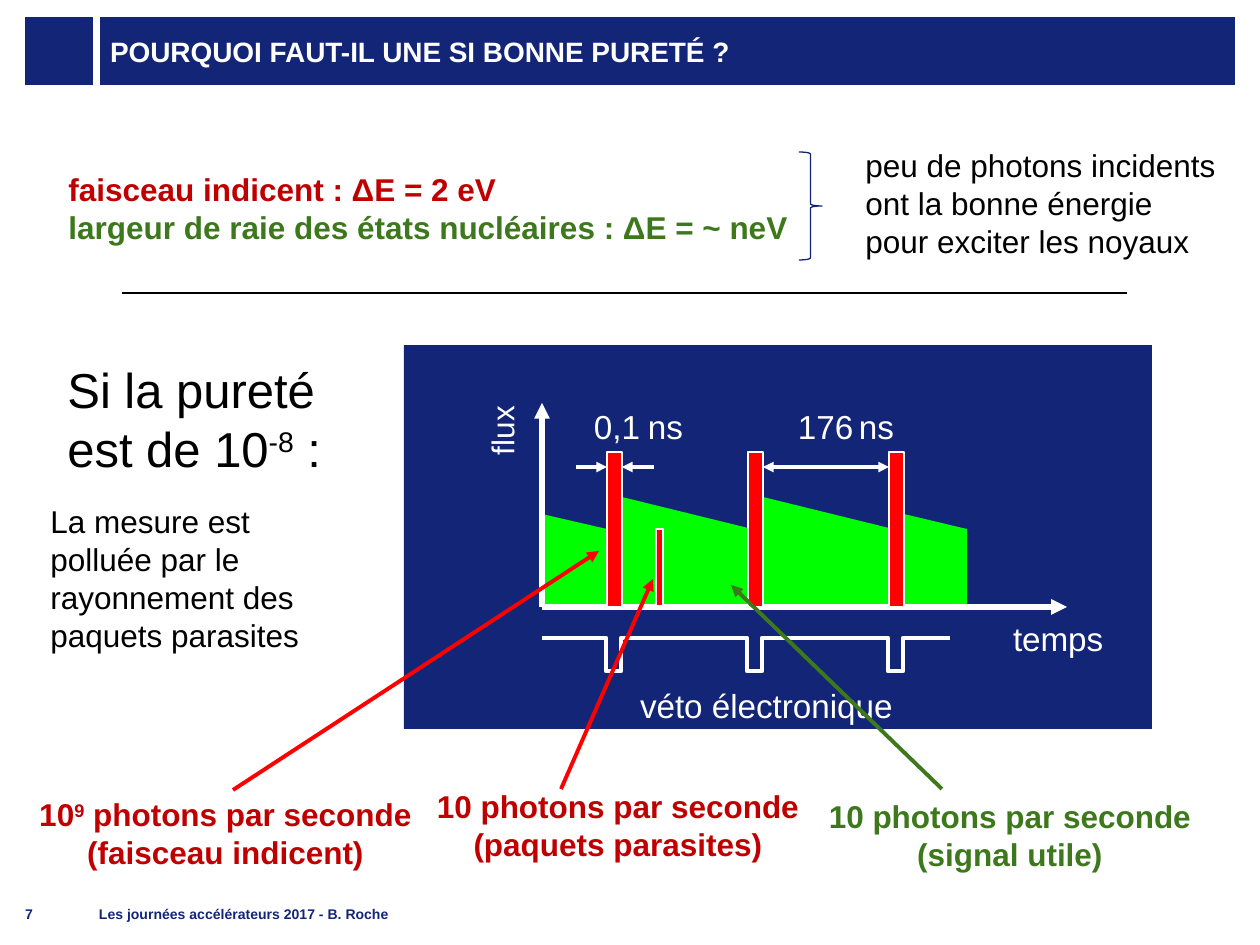
"""Build the slide on beam purity, with its flux timing diagram."""
from dataclasses import dataclass

from lxml.etree import SubElement
from pptx import Presentation
from pptx.dml.color import RGBColor
from pptx.enum.shapes import MSO_CONNECTOR, MSO_SHAPE
from pptx.enum.text import MSO_ANCHOR, MSO_AUTO_SIZE, PP_ALIGN
from pptx.oxml.ns import qn
from pptx.util import Pt

PX = 914400 / 126


@dataclass(frozen=True)
class Theme:
    font: str = "Arial"
    navy: str = "132577"
    brace: str = "102377"
    white: str = "FFFFFF"
    black: str = "000000"
    crimson: str = "C00000"
    red: str = "FF0000"
    olive: str = "3D781C"
    green: str = "00FF00"
    heading: int = 16
    statement: int = 28
    body: int = 18
    label: int = 19
    footer: int = 8


THEME = Theme()
LEFT, CENTER = PP_ALIGN.LEFT, PP_ALIGN.CENTER

TITLE = "POURQUOI FAUT-IL UNE SI BONNE PURETÉ ?"
ENERGY_WIDTHS = [
    ("faisceau indicent : ΔE = 2 eV", THEME.crimson),
    ("largeur de raie des états nucléaires : ΔE = ~ neV", THEME.olive),
]
TEXTS = [
    ((55, 353, 331, 131), [["Si la pureté est de 10", "^-8", " :"]], THEME.statement),
    ((853, 140, 379, 127),
     [["peu de photons incidents", "\n", "ont la bonne énergie pour exciter les noyaux"]], THEME.body),
    ((38, 496, 331, 165),
     [["La mesure est polluée par le rayonnement des paquets parasites"]], THEME.body),
]
CAPTIONS = [
    ((24, 789, 403, 89), [["10", "^9", " photons par seconde"], ["(faisceau indicent)"]], THEME.crimson),
    ((422, 781, 392, 89), [["10 photons par seconde"], ["(paquets parasites)"]], THEME.crimson),
    ((814, 791, 392, 89), [["10 photons par seconde"], ["(signal utile)"]], THEME.olive),
]
DIAGRAM_LABELS = [
    ("0,1", (594, 406, 55, 40)),
    ("ns", (648, 406, 49, 45)),
    ("176", (798, 406, 78, 45)),
    ("ns", (859, 406, 49, 45)),
    ("temps", (1013, 618, 92, 40)),
    ("véto électronique", (640, 685, 257, 40)),
]
FOOTERS = [("7", (25, 893, 57, 29)), ("Les journées accélérateurs 2017 - B. Roche", (99, 893, 843, 29))]
POINTERS = [
    ((233, 790), (599, 551), THEME.red),
    ((561, 789), (653, 579), THEME.red),
    ((942, 789), (731, 585), THEME.olive),
]

ORIGIN, BASELINE, PERIOD = 542, 607, 141
PULSES = [607 + PERIOD * index for index in range(3)]
PULSE_WIDTH, PULSE_TOP = 15, 452
DIMENSION_Y, VETO_HIGH, VETO_LOW, VETO_END = 467, 638, 671, 950
DIMENSIONS = [(576, PULSES[0], False), (654, PULSES[0] + PULSE_WIDTH, False),
              (PULSES[1] + PULSE_WIDTH, PULSES[2], True)]
DECAYS = [
    (ORIGIN, PULSES[0], 514, 529),
    (PULSES[0] + PULSE_WIDTH, PULSES[1], 497, 528),
    (PULSES[1] + PULSE_WIDTH, PULSES[2], 497, 528),
    (PULSES[2] + PULSE_WIDTH, 967, 514, 529),
]


def emu(*lengths):
    return [round(length * PX) for length in lengths]


def paint(shape, fill=None, line=None, width=0.75):
    shape.shadow.inherit = False
    if fill:
        shape.fill.solid()
        shape.fill.fore_color.rgb = RGBColor.from_string(fill)
    else:
        shape.fill.background()
    if line:
        shape.line.color.rgb = RGBColor.from_string(line)
        shape.line.width = Pt(width)
    else:
        shape.line.fill.background()


def add_preset(slide, box, fill=None, line=None, width=0.75, kind=MSO_SHAPE.RECTANGLE):
    paint(slide.shapes.add_shape(kind, *emu(*box)), fill, line, width)


def add_outline(slide, points, closed, **style):
    builder = slide.shapes.build_freeform(*points[0], scale=PX)
    builder.add_line_segments(points[1:], close=closed)
    paint(builder.convert_to_shape(), **style)


def add_line(slide, start, end, color, width, heads=()):
    line = slide.shapes.add_connector(MSO_CONNECTOR.STRAIGHT, *emu(*start, *end))
    line.line.color.rgb = RGBColor.from_string(color)
    line.line.width = Pt(width)
    for head in heads:
        SubElement(line.line._get_or_add_ln(), qn(f"a:{head}"), type="triangle")
    SubElement(line._element.spPr, qn("a:effectLst"))


def add_run(paragraph, text, size, color, bold=False):
    if text == "\n":
        paragraph.add_line_break()
        return
    run = paragraph.add_run()
    run.text = text.removeprefix("^")
    run.font.name, run.font.size, run.font.bold = THEME.font, Pt(size), bold
    run.font.color.rgb = RGBColor.from_string(color)
    if text.startswith("^"):
        run.font._element.set("baseline", "30000")


def set_margins(frame, side):
    frame.margin_left = frame.margin_right = round(side * PX)
    frame.margin_top = frame.margin_bottom = 0


def add_text(slide, box, paragraphs, size, color, bold=False, wrap=True, align=LEFT, tight=False):
    shape = slide.shapes.add_textbox(*emu(*box))
    frame = shape.text_frame
    frame.word_wrap = wrap
    frame.auto_size = MSO_AUTO_SIZE.SHAPE_TO_FIT_TEXT
    if tight:
        set_margins(frame, 0)
    for index, texts in enumerate(paragraphs):
        paragraph = frame.add_paragraph() if index else frame.paragraphs[0]
        paragraph.alignment = align
        for text in texts:
            add_run(paragraph, text, size, color, bold)
    return shape


def add_header(slide):
    add_preset(slide, (25, 17, 68, 68), THEME.navy)
    title = slide.shapes.title
    title.left, title.top, title.width, title.height = emu(100, 17, 1135, 68)
    title.fill.solid()
    title.fill.fore_color.rgb = RGBColor.from_string(THEME.navy)
    frame = title.text_frame
    frame.vertical_anchor = MSO_ANCHOR.MIDDLE
    set_margins(frame, 10)
    frame.paragraphs[0].alignment = LEFT
    add_run(frame.paragraphs[0], TITLE, THEME.heading, THEME.white, True)


def add_diagram(slide):
    add_preset(slide, (404, 345, 748, 384), THEME.navy)
    for left, right, start, end in DECAYS:
        add_outline(slide, [(left, BASELINE), (left, start), (right, end), (right, BASELINE)],
                    True, fill=THEME.green)
    for end in ((1067, BASELINE), (ORIGIN, 403)):
        add_line(slide, (ORIGIN, BASELINE), end, THEME.white, 3, ["tailEnd"])
    veto = [(ORIGIN, VETO_HIGH)]
    for left in PULSES:
        add_preset(slide, (left, PULSE_TOP, PULSE_WIDTH, BASELINE - PULSE_TOP), THEME.red, THEME.white, 1.5)
        right = left + PULSE_WIDTH
        veto += [(left - 1, VETO_HIGH), (left - 1, VETO_LOW), (right - 1, VETO_LOW), (right - 1, VETO_HIGH)]
    add_outline(slide, veto + [(VETO_END, VETO_HIGH)], False, line=THEME.white, width=2.5)
    for start, end, double in DIMENSIONS:
        heads = ["headEnd", "tailEnd"] if double else ["tailEnd"]
        add_line(slide, (start, DIMENSION_Y), (end, DIMENSION_Y), THEME.white, 2, heads)
    for text, box in DIAGRAM_LABELS:
        add_text(slide, box, [[text]], THEME.label, THEME.white, wrap=False, tight=True)
    flux = add_text(slide, (452, 386, 100, 38), [["flux"]], THEME.body, THEME.white, tight=True)
    flux.rotation = 270
    for start, end, color in POINTERS:
        add_line(slide, start, end, color, 2.25, ["tailEnd"])
    add_preset(slide, (656, 529, 7, 77), THEME.red, THEME.white)


def main():
    presentation = Presentation()
    presentation.slide_width, presentation.slide_height = emu(1260, 945)
    slide = presentation.slides.add_slide(presentation.slide_layouts[5])
    add_header(slide)
    for box, paragraphs, size in TEXTS:
        add_text(slide, box, paragraphs, size, THEME.black)
    for box, paragraphs, color in CAPTIONS:
        add_text(slide, box, paragraphs, THEME.body, color, True, False, CENTER)
    add_diagram(slide)
    widths = add_text(slide, (56, 164, 748, 89), [[]], THEME.body, THEME.black, wrap=False)
    paragraph = widths.text_frame.paragraphs[0]
    for index, (text, color) in enumerate(ENERGY_WIDTHS):
        if index:
            paragraph.add_line_break()
        add_run(paragraph, text, THEME.body, color, True)
    add_preset(slide, (799, 152, 23, 108), line=THEME.brace, kind=MSO_SHAPE.RIGHT_BRACE)
    add_line(slide, (122, 293), (1127, 293), THEME.black, 0.75)
    for text, box in FOOTERS:
        footer = add_text(slide, box, [[text]], THEME.footer, THEME.navy, True, tight=True)
        footer.text_frame.auto_size = MSO_AUTO_SIZE.NONE
        footer.text_frame.vertical_anchor = MSO_ANCHOR.BOTTOM
    presentation.save("out.pptx")


if __name__ == "__main__":
    main()
